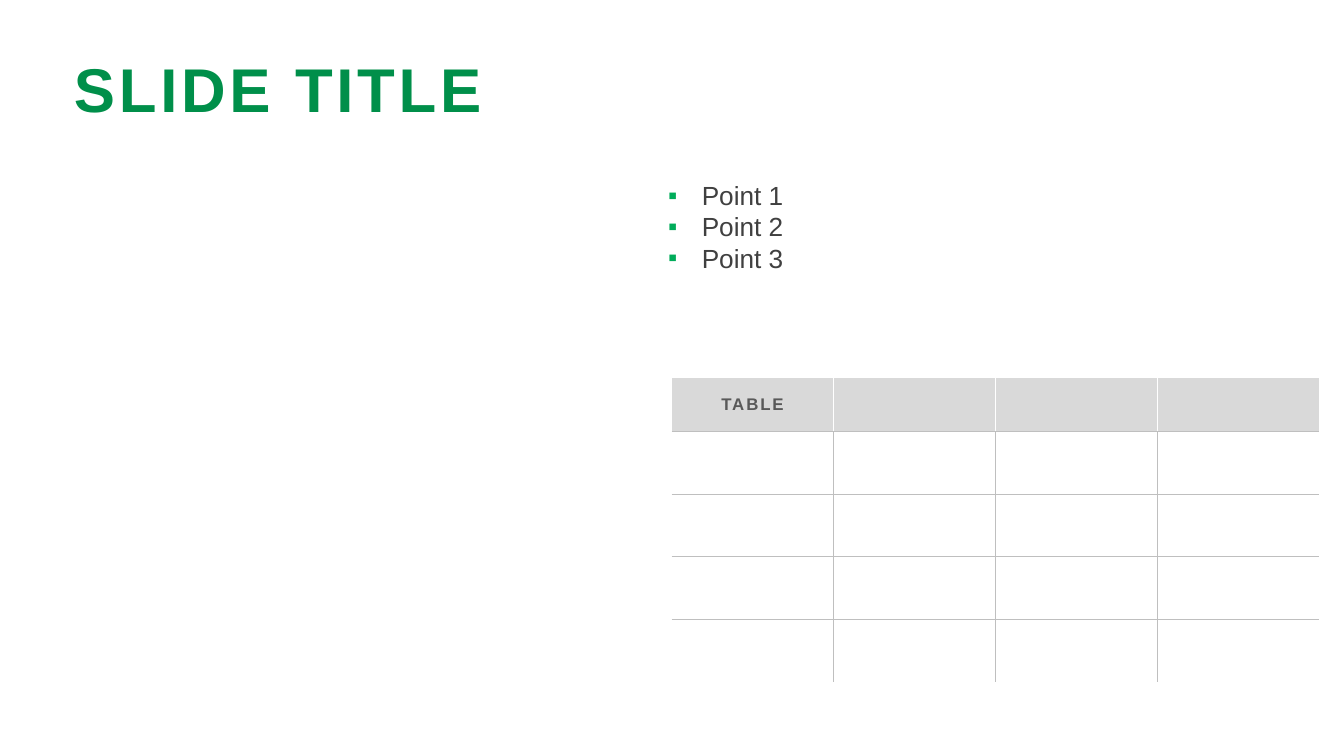
from lxml.etree import SubElement
from pptx import Presentation
from pptx.dml.color import RGBColor
from pptx.enum.text import MSO_ANCHOR, PP_ALIGN
from pptx.oxml import parse_xml
from pptx.oxml.ns import nsdecls, qn
from pptx.util import Pt

COLORS = {
    "title": "008F4A",
    "bullet": "00AC5A",
    "body": "404040",
    "header_text": "595959",
    "header_fill": "D9D9D9",
    "rule": "BFBFBF",
    "white": "FFFFFF",
}
FONT = "Arial"


def rgb(name):
    return RGBColor.from_string(COLORS[name])


def write(p, text, size, color, bold=False, spacing=0, align=None):
    """Add a formatted run; size and letter spacing are in points."""
    p.alignment = align
    r = p.add_run()
    r.text = text
    r.font.name = FONT
    r.font.size = Pt(size)
    r.font.bold = bold
    r.font.color.rgb = rgb(color)
    if spacing:
        r._r.get_or_add_rPr().set("spc", str(spacing * 100))


def add_text_frame(slide, box, anchor=MSO_ANCHOR.TOP):
    tf = slide.shapes.add_textbox(*map(Pt, box)).text_frame
    tf.word_wrap = True
    tf.vertical_anchor = anchor
    return tf


def set_bullet(p, char, color, indent):
    pPr = p._p.get_or_add_pPr()
    pPr.set("marL", str(Pt(indent)))
    pPr.set("indent", str(-Pt(indent)))
    clr = SubElement(pPr, qn("a:buClr"))
    SubElement(clr, qn("a:srgbClr"), val=COLORS[color])
    SubElement(pPr, qn("a:buFont"), typeface=FONT)
    SubElement(pPr, qn("a:buChar"), char=char)


def set_borders(cell, colors):
    """Set left, right, top and bottom borders; None leaves a side open."""
    tcPr = cell._tc.get_or_add_tcPr()
    for i, (side, color) in enumerate(zip("LRTB", colors)):
        fill = (f'<a:solidFill><a:srgbClr val="{COLORS[color]}"/></a:solidFill>'
                if color else "<a:noFill/>")
        tcPr.insert(i, parse_xml(
            f'<a:ln{side} {nsdecls("a")} w="{Pt(1)}">{fill}</a:ln{side}>'))


def add_title(slide, box, text):
    tf = add_text_frame(slide, box, MSO_ANCHOR.MIDDLE)
    write(tf.paragraphs[0], text, 66, "title", bold=True, spacing=4)


def add_points(slide, box, points):
    tf = add_text_frame(slide, box)
    for i, point in enumerate(points):
        p = tf.add_paragraph() if i else tf.paragraphs[0]
        set_bullet(p, "▪", "bullet", 36)
        write(p, point, 28, "body")


def add_grid(slide, box, heading, rows=5, cols=4, header_height=57):
    """Add a table with inner rules only and a shaded header row."""
    table = slide.shapes.add_table(rows, cols, *map(Pt, box)).table
    table.first_row = table.horz_banding = False
    width, height = box[2:]
    for column in table.columns:
        column.width = Pt(width / cols)
    for i, row in enumerate(table.rows):
        row.height = Pt((height - header_height) / (rows - 1) if i else header_height)
        for j, cell in enumerate(row.cells):
            cell.vertical_anchor = MSO_ANCHOR.MIDDLE
            if i:
                cell.fill.background()
            else:
                cell.fill.solid()
                cell.fill.fore_color.rgb = rgb("header_fill")
            divider = "rule" if i else "white"
            set_borders(cell, (divider if j else None,
                               divider if j < cols - 1 else None,
                               "rule" if i else None,
                               "rule" if i < rows - 1 else None))
    write(table.cell(0, 0).text_frame.paragraphs[0], heading, 18, "header_text",
          bold=True, spacing=2, align=PP_ALIGN.CENTER)


def main():
    prs = Presentation()
    prs.slide_width, prs.slide_height = Pt(1436.4), Pt(807.84)
    slide = prs.slides.add_slide(prs.slide_layouts[6])
    add_title(slide, (72, 29.5, 1292.4, 129.6), "SLIDE TITLE")
    add_grid(slide, (717.8, 403.9, 692, 325), "TABLE")
    add_points(slide, (707, 188, 692, 108.7), [f"Point {n}" for n in (1, 2, 3)])
    prs.save("out.pptx")


if __name__ == "__main__":
    main()
